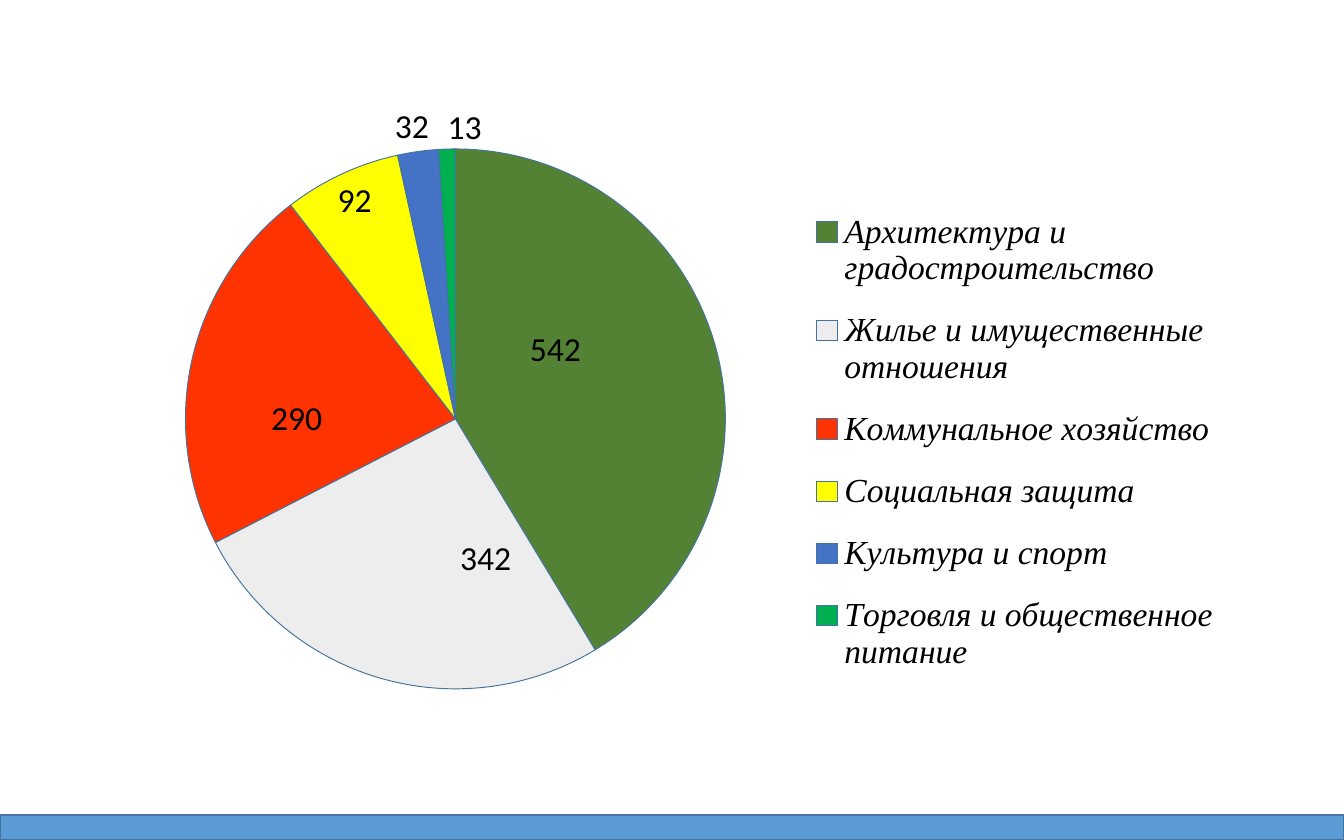
import pptx
import pptx.util
import pptx.chart.data
import pptx.dml.color
import pptx.enum.chart
import pptx.enum.shapes
import pptx.oxml

PX = pptx.util.Inches(10) / 1344
SLIDE = (1344, 840)
CHART = (58, 82, 1223, 668)
PIE = (185, 149, 541, 540)
LEGEND = (805, 188, 420, 508)
FOOTER = (0, 815, 1344, 25)

COLORS = {
    "green": "548235", "grey": "EDEDED", "red": "FF3300", "yellow": "FFFF00",
    "blue": "4472C4", "emerald": "00B050", "footer": "5B9BD5",
    "outline": "43739E", "text": "000000",
}

# topic, appeals, colour, label position, label shift in px
TOPICS = [
    ("Архитектура и градостроительство", 542, "green", "CENTER", (-30, -33)),
    ("Жилье и имущественные отношения", 342, "grey", "CENTER", (67, 10)),
    ("Коммунальное хозяйство", 290, "red", "CENTER", (-27, 29)),
    ("Социальная защита", 92, "yellow", "INSIDE_END", (-7, -1)),
    ("Культура и спорт", 32, "blue", "OUTSIDE_END", (12, 3)),
    ("Торговля и общественное питание", 13, "emerald", "OUTSIDE_END", (18, 7)),
]


def emu(lengths):
    return [round(length * PX) for length in lengths]


def rgb(name):
    return pptx.dml.color.RGBColor.from_string(COLORS[name])


def paint(part, fill, width):
    part.fill.solid()
    part.fill.fore_color.rgb = rgb(fill)
    part.line.color.rgb = rgb("outline")
    part.line.width = pptx.util.Pt(width)


def set_font(font, name, size, italic=False):
    font.name = name
    font.size = pptx.util.Pt(size)
    font.italic = italic
    font.color.rgb = rgb("text")


def manual_layout(**values):
    """Return a c:layout element holding fractions of the chart area."""
    ns = "http://schemas.openxmlformats.org/drawingml/2006/chart"
    parts = "".join(f'<c:{tag} val="{value}"/>' for tag, value in values.items())
    return pptx.oxml.parse_xml(
        f'<c:layout xmlns:c="{ns}"><c:manualLayout>{parts}</c:manualLayout></c:layout>')


def box_layout(box, **extra):
    left, top, width, height = CHART
    return manual_layout(
        **extra, xMode="edge", yMode="edge",
        x=round((box[0] - left) / width, 4), y=round((box[1] - top) / height, 4),
        w=round(box[2] / width, 4), h=round(box[3] / height, 4))


def add_appeals_chart(slide):
    data = pptx.chart.data.CategoryChartData()
    data.categories = [topic[0] for topic in TOPICS]
    data.add_series("Series 1", [topic[1] for topic in TOPICS])
    chart = slide.shapes.add_chart(
        pptx.enum.chart.XL_CHART_TYPE.PIE, *emu(CHART), data).chart
    chart.has_title = False
    set_font(chart.font, "Calibri", 18)

    pie = chart.plots[0]
    pie.vary_by_categories = True
    pie._element.getparent().insert(0, box_layout(PIE, layoutTarget="inner"))

    appeals = pie.series[0]
    appeals.data_labels.show_value = True
    set_font(appeals.data_labels.font, "Calibri", 18)
    for index, (_, _, color, position, (shift_x, shift_y)) in enumerate(TOPICS):
        point = appeals.points[index]
        paint(point.format, color, 0.5)
        label = point.data_label
        set_font(label.font, "Calibri", 18)
        label.position = getattr(pptx.enum.chart.XL_LABEL_POSITION, position)
        label._get_or_add_dLbl().insert(1, manual_layout(
            x=round(shift_x / CHART[2], 4), y=round(shift_y / CHART[3], 4)))

    chart.has_legend = True
    legend = chart.legend
    legend.position = pptx.enum.chart.XL_LEGEND_POSITION.RIGHT
    legend.include_in_layout = False
    set_font(legend.font, "Times New Roman", 18, italic=True)
    for old_layout in legend._element.xpath("c:layout"):
        legend._element.remove(old_layout)
    legend._element.insert(1, box_layout(LEGEND))


def main():
    presentation = pptx.Presentation()
    presentation.slide_width, presentation.slide_height = emu(SLIDE)
    slide = presentation.slides.add_slide(presentation.slide_layouts[6])
    add_appeals_chart(slide)
    footer = slide.shapes.add_shape(
        pptx.enum.shapes.MSO_SHAPE.RECTANGLE, *emu(FOOTER))
    footer.shadow.inherit = False
    paint(footer, "footer", 1)
    presentation.save("out.pptx")


if __name__ == "__main__":
    main()
